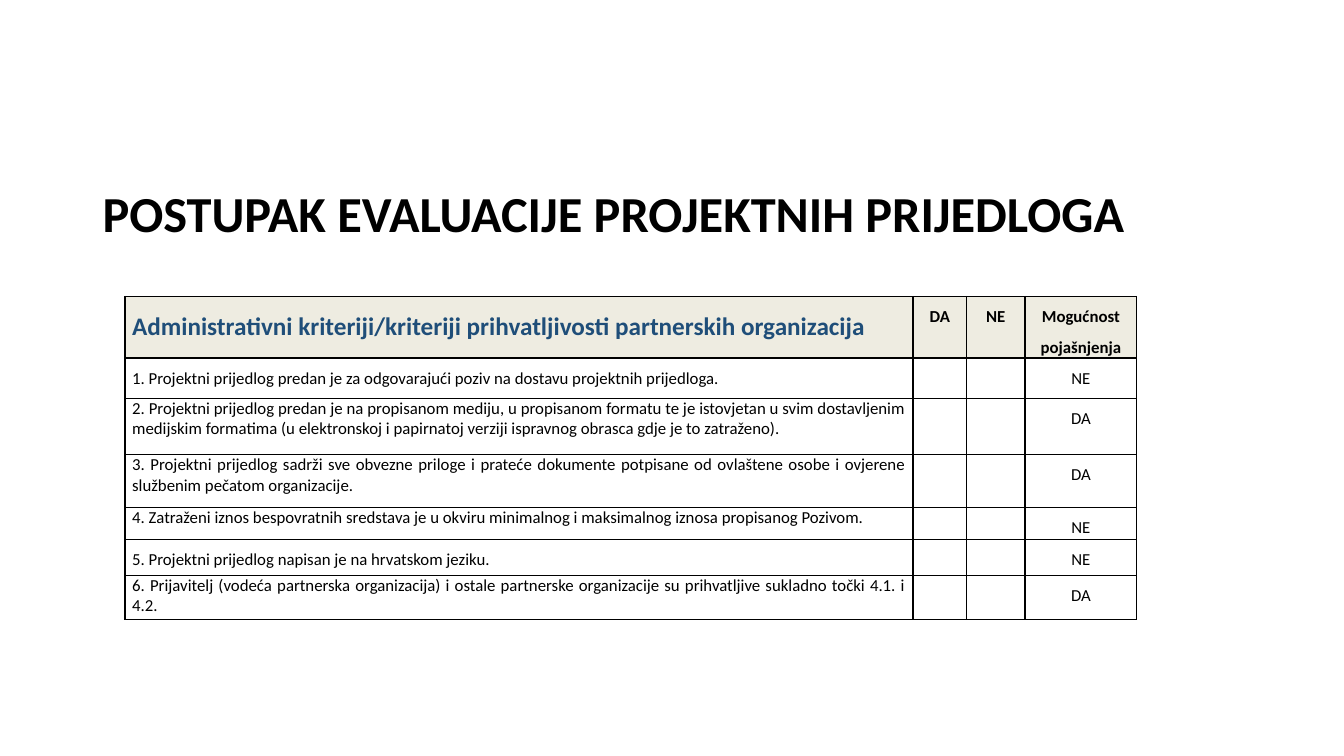
import pptx
import pptx.dml.color
import pptx.enum.text
import pptx.oxml
import pptx.oxml.ns
import pptx.util
from pptx.util import Cm

FONT = "Calibri"
BLACK = "000000"
HEADING_BLUE = "1F4E79"
HEADER_FILL = "EEECE1"
ALIGN = pptx.enum.text.PP_ALIGN

COLUMN_WIDTHS = [19.86, 1.35, 1.47, 2.82]
ROW_HEIGHTS = [1.19, 1.02, 1.42, 1.32, 0.81, 0.91, 1.12]
HEADERS = [
    "Administrativni kriteriji/kriteriji prihvatljivosti partnerskih organizacija",
    "DA", "NE", "Mogućnost pojašnjenja",
]
# Criterion, possibility of clarification, line spacing of the criterion
CRITERIA = [
    ("1. Projektni prijedlog predan je za odgovarajući poziv na dostavu "
     "projektnih prijedloga.", "NE", 1.5),
    ("2. Projektni prijedlog predan je na propisanom mediju, u propisanom formatu "
     "te je istovjetan u svim dostavljenim medijskim formatima (u elektronskoj i "
     "papirnatoj verziji ispravnog obrasca gdje je to zatraženo).", "DA", 1.0),
    ("3. Projektni prijedlog sadrži sve obvezne priloge i prateće dokumente "
     "potpisane od ovlaštene osobe i ovjerene službenim pečatom organizacije.",
     "DA", 1.0),
    ("4. Zatraženi iznos bespovratnih sredstava je u okviru minimalnog i "
     "maksimalnog iznosa propisanog Pozivom.", "NE", 1.0),
    ("5. Projektni prijedlog napisan je na hrvatskom jeziku.", "NE", 1.5),
    ("6. Prijavitelj (vodeća partnerska organizacija) i ostale partnerske "
     "organizacije su prihvatljive sukladno točki 4.1. i 4.2.", "DA", 1.0),
]


def color(hex_text):
    return pptx.dml.color.RGBColor.from_string(hex_text)


def format_font(font, size, hex_text, bold):
    font.name = FONT
    font.size = pptx.util.Pt(size)
    font.bold = bold
    font.color.rgb = color(hex_text)


def add_title(slide, left, top, width, height):
    title = slide.shapes.title
    title.left, title.top, title.width, title.height = left, top, width, height
    frame = title.text_frame
    frame.text = "POSTUPAK EVALUACIJE PROJEKTNIH PRIJEDLOGA"
    frame.word_wrap = True
    frame.auto_size = pptx.enum.text.MSO_AUTO_SIZE.NONE
    frame.vertical_anchor = pptx.enum.text.MSO_ANCHOR.MIDDLE
    frame.margin_top = Cm(1.5)
    paragraph = frame.paragraphs[0]
    paragraph.alignment = ALIGN.LEFT
    paragraph.line_spacing = 0.9
    format_font(paragraph.runs[0].font, 36, BLACK, True)


def add_borders(cell):
    properties = cell._tc.get_or_add_tcPr()
    for side in ("lnL", "lnR", "lnT", "lnB"):
        properties.append(pptx.oxml.parse_xml(
            f'<a:{side} {pptx.oxml.ns.nsdecls("a")} w="12700"><a:solidFill>'
            f'<a:srgbClr val="{BLACK}"/></a:solidFill></a:{side}>'))


def format_cell(cell, text, is_header, is_criterion, line_spacing):
    add_borders(cell)
    if is_header:
        cell.fill.solid()
        cell.fill.fore_color.rgb = color(HEADER_FILL)
    else:
        cell.fill.background()
    cell.margin_left = cell.margin_right = Cm(0.18)
    cell.margin_top = cell.margin_bottom = 0
    cell.text_frame.text = text
    paragraph = cell.text_frame.paragraphs[0]
    paragraph.alignment = ALIGN.JUSTIFY if is_criterion else ALIGN.CENTER
    paragraph.line_spacing = line_spacing
    is_heading = is_header and is_criterion
    size, hex_text = (18, HEADING_BLUE) if is_heading else (12, BLACK)
    fonts = [run.font for run in paragraph.runs] or [paragraph.font]
    for font in fonts:
        format_font(font, size, hex_text, is_header)


def add_criteria_table(slide, left, top):
    rows = [HEADERS] + [[text, "", "", answer] for text, answer, _ in CRITERIA]
    spacings = [1.5] + [spacing for _, _, spacing in CRITERIA]
    table = slide.shapes.add_table(
        len(rows), len(HEADERS), left, top,
        Cm(sum(COLUMN_WIDTHS)), Cm(sum(ROW_HEIGHTS))).table
    table.first_row = table.horz_banding = False
    for column, width in zip(table.columns, COLUMN_WIDTHS):
        column.width = Cm(width)
    for row_index, texts in enumerate(rows):
        table.rows[row_index].height = Cm(ROW_HEIGHTS[row_index])
        for column_index, text in enumerate(texts):
            is_criterion = column_index == 0
            if is_criterion:
                spacing = spacings[row_index]
            else:
                spacing = 1.5 if text else 1.0
            format_cell(table.cell(row_index, column_index), text,
                        row_index == 0, is_criterion, spacing)


def main():
    presentation = pptx.Presentation()
    presentation.slide_width = Cm(33.87)
    presentation.slide_height = Cm(19.05)
    slide = presentation.slides.add_slide(presentation.slide_layouts[5])
    add_title(slide, Cm(2.33), Cm(2.92), Cm(29.21), Cm(3.68))
    add_criteria_table(slide, Cm(3.15), Cm(7.47))
    presentation.save("out.pptx")


if __name__ == "__main__":
    main()
